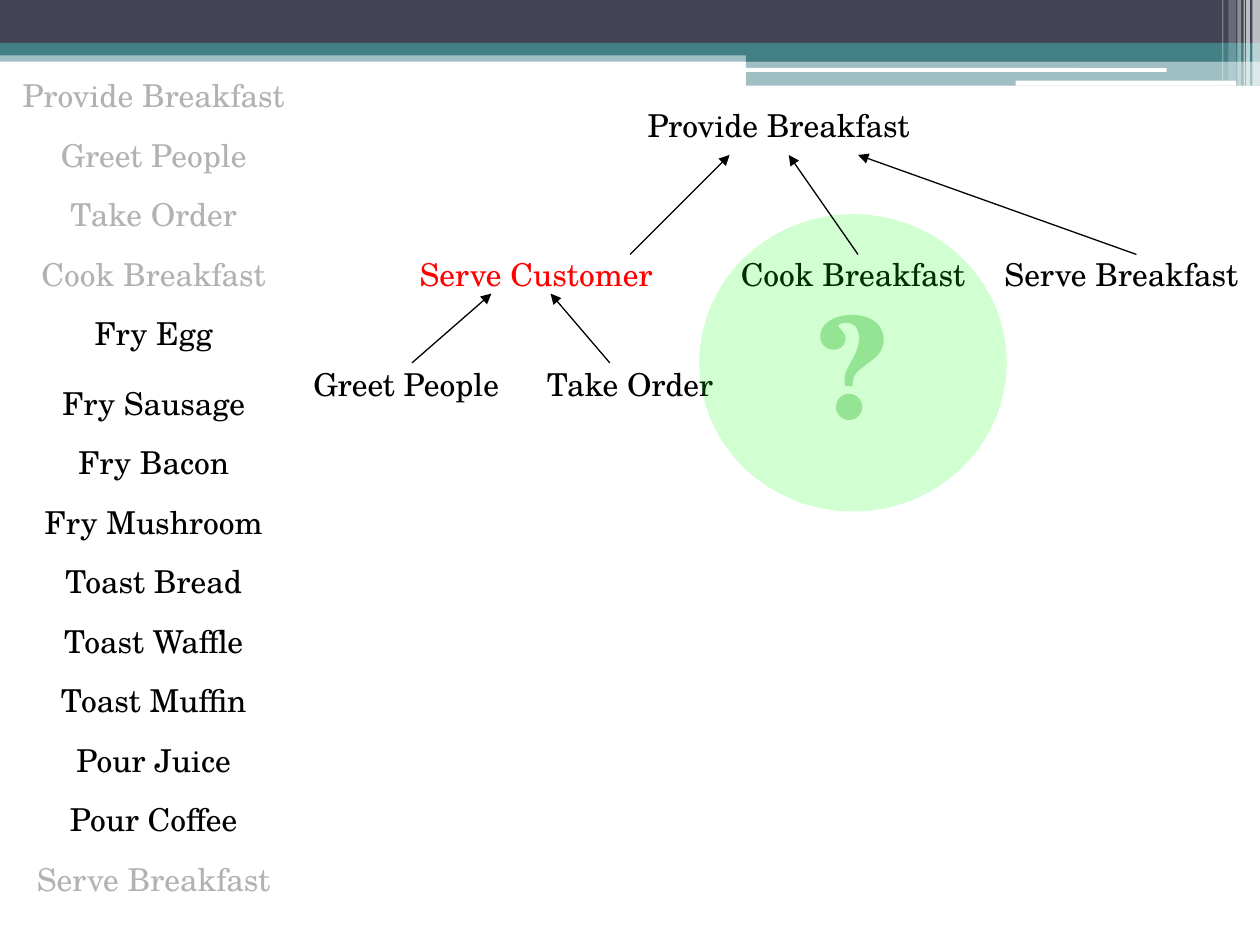
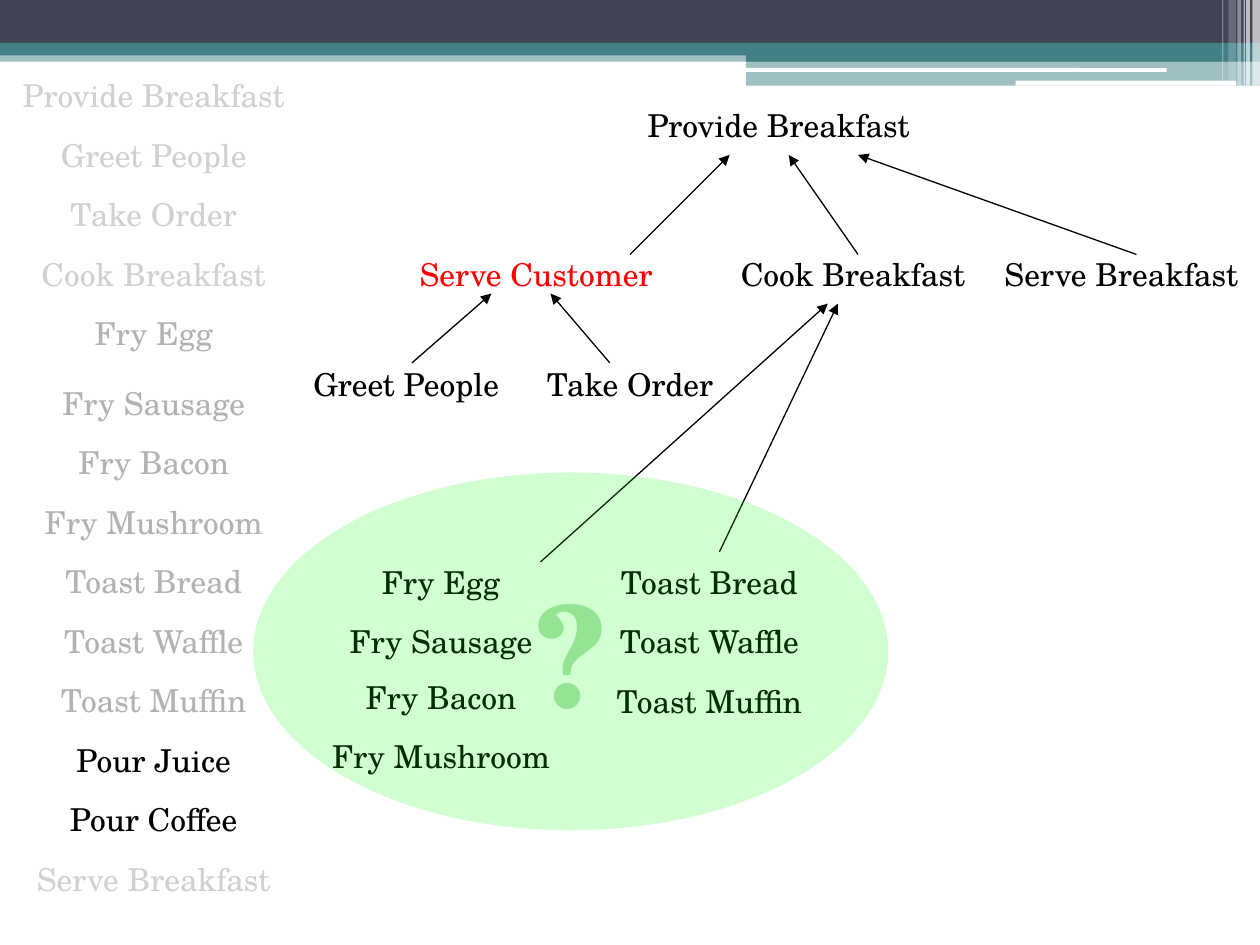
import dataclasses

import lxml.etree
import pptx
import pptx.dml.color
import pptx.enum.shapes
import pptx.enum.text
import pptx.oxml.ns
import pptx.util

RGBColor = pptx.dml.color.RGBColor
SHAPES = pptx.enum.shapes.MSO_SHAPE

BLACK = RGBColor(0x00, 0x00, 0x00)
WHITE = RGBColor(0xFF, 0xFF, 0xFF)
RED = RGBColor(0xFF, 0x00, 0x00)
GREY = RGBColor(0xB2, 0xB2, 0xB2)
PALE_GREY = RGBColor(0xD0, 0xD0, 0xD0)
NAVY = RGBColor(0x42, 0x44, 0x56)
TEAL = RGBColor(0x43, 0x80, 0x86)
GREEN = RGBColor(0x00, 0xFF, 0x00)
LEAF_GREEN = RGBColor(0x94, 0xE4, 0x94)

FONT = "TeX Gyre Schola"
SLIDE_WIDTH = pptx.util.Inches(10)
SLIDE_HEIGHT = pptx.util.Inches(7.5)
GRID = SLIDE_WIDTH / 10  # one grid cell; the slide is 10 columns by 7.5 rows

LABEL_WIDTH = 2.2
LABEL_HEIGHT = 0.47

TASKS = [
    "Provide Breakfast", "Greet People", "Take Order", "Cook Breakfast",
    "Fry Egg", "Fry Sausage", "Fry Bacon", "Fry Mushroom",
    "Toast Bread", "Toast Waffle", "Toast Muffin",
    "Pour Juice", "Pour Coffee", "Serve Breakfast",
]
FRYING = TASKS[4:8]
TOASTING = TASKS[8:11]
POURING = TASKS[11:13]
TASK_GAP = 0.08
ROW = (6.74 - 0.52 - TASK_GAP) / (len(TASKS) - 1)


@dataclasses.dataclass
class Box:
    left: float
    top: float
    width: float
    height: float

    def inner(self, left, top, width, height):
        """Return a box placed relative to this one's corner."""
        return Box(self.left + left, self.top + top, width, height)

    def emu(self):
        return [round(length * GRID) for length in
                (self.left, self.top, self.width, self.height)]


WHOLE_SLIDE = Box(0, 0, 10, 7.5)
TASK_LIST = Box(0.12, 0.52, LABEL_WIDTH, 6.69)
TREE = Box(2.4, 0.76, 7.6, 2.52)
LEAVES = Box(2.4, 4.38, 4.33, 1.86)


def add_filled(page, kind, box, colour, opacity=100):
    shape = page.shapes.add_shape(kind, *box.emu())
    shape.shadow.inherit = False
    shape.line.fill.background()
    shape.fill.solid()
    shape.fill.fore_color.rgb = colour
    if opacity < 100:
        tint = next(shape.element.iter(pptx.oxml.ns.qn("a:srgbClr")))
        lxml.etree.SubElement(tint, pptx.oxml.ns.qn("a:alpha"),
                              val=str(opacity * 1000))
    return shape


def write(shape, words, size, colour, bold=False):
    frame = shape.text_frame
    frame.text = words
    frame.word_wrap = False
    frame.margin_left = frame.margin_right = 0
    frame.vertical_anchor = pptx.enum.text.MSO_ANCHOR.MIDDLE
    para = frame.paragraphs[0]
    para.alignment = pptx.enum.text.PP_ALIGN.CENTER
    font = para.runs[0].font
    font.name = FONT
    font.size = pptx.util.Pt(size)
    font.bold = bold
    font.color.rgb = colour


def add_label(page, box, words, colour=BLACK):
    write(page.shapes.add_textbox(*box.emu()), words, 18, colour)


def add_arrow(page, box, start, end):
    """Draw an arrow between two points given relative to the box."""
    ends = [round(length * GRID) for x, y in (start, end)
            for length in (box.left + x, box.top + y)]
    arrow = page.shapes.add_connector(
        pptx.enum.shapes.MSO_CONNECTOR.STRAIGHT, *ends)
    arrow.line.color.rgb = BLACK
    arrow.line.width = pptx.util.Pt(0.75)
    outline = arrow.element.spPr.find(pptx.oxml.ns.qn("a:ln"))
    lxml.etree.SubElement(outline, pptx.oxml.ns.qn("a:tailEnd"),
                          type="triangle")
    lxml.etree.SubElement(arrow.element.spPr, pptx.oxml.ns.qn("a:effectLst"))


def add_column(page, box, names, colour_of, shift_from, shift):
    """Stack labels by row; those from index shift_from on move by shift."""
    for index, name in enumerate(names):
        top = index * ROW + (shift if index >= shift_from else 0)
        add_label(page, box.inner(0, top, box.width, LABEL_HEIGHT),
                  name, colour_of(name))


def add_header_band(page, box):
    """Draw the header and return its shapes."""
    bars = [
        (0, 0.4, 10, 0.09, TEAL, 50),
        (0, 0, 10, 0.34, NAVY, 100),
        (0, 0.34, 10, 0.1, TEAL, 100),
        (5.92, 0.39, 4.08, 0.1, TEAL, 100),
        (5.92, 0.48, 4.08, 0.2, TEAL, 50),
    ]
    rounded_bars = [(5.91, 0.54, 3.35, 0.03), (8.06, 0.64, 1.75, 0.04)]
    stripes = [
        (9.94, 0.06, 0.68, 65), (9.89, 0.03, 0.68, 65),
        (9.87, 0.01, 0.68, 60), (9.82, 0.03, 0.68, 40),
        (9.75, 0.06, 0.64, 20), (9.7, 0.01, 0.64, 30),
    ]
    band = [add_filled(page, SHAPES.RECTANGLE, box.inner(*place), colour, opacity)
            for *place, colour, opacity in bars]
    band += [add_filled(page, SHAPES.ROUNDED_RECTANGLE, box.inner(*place), WHITE)
             for place in rounded_bars]
    band += [add_filled(page, SHAPES.RECTANGLE,
                        box.inner(left, 0, width, height), WHITE, opacity)
             for left, width, height, opacity in stripes]
    return band


def share_header_band(page):
    """Put the header on the layout, so that every slide shows it."""
    for shape in add_header_band(page, WHOLE_SLIDE):
        page.slide_layout.shapes.element.append(shape.element)


def add_branches(page, box):
    for name, left, top, width, colour in [
        ("Cook Breakfast", 3.27, 1.18, LABEL_WIDTH, BLACK),
        ("Take Order", 1.85, 2.05, 1.5, BLACK),
        ("Greet People", 0, 2.05, 1.65, BLACK),
        ("Serve Breakfast", 5.4, 1.18, LABEL_WIDTH, BLACK),
        ("Serve Customer", 0.87, 1.18, 1.97, RED),
    ]:
        add_label(page, box.inner(left, top, width, LABEL_HEIGHT), name, colour)
    for start_x, end_x in [(0.87, 1.5), (2.44, 1.97)]:
        add_arrow(page, box, (start_x, 2.12), (end_x, 1.57))


def add_root(page, box):
    add_label(page, box.inner(2.68, 0, LABEL_WIDTH, LABEL_HEIGHT),
              "Provide Breakfast")
    for start_x, end_x in [(2.6, 3.39), (4.41, 3.86), (6.62, 4.41)]:
        add_arrow(page, box, (start_x, 1.26), (end_x, 0.47))


def add_leaves(page, box):
    """Add the frying and toasting tasks with arrows up to their parent."""
    for names, left, shift in [(FRYING, 0, -0.03), (TOASTING, 2.13, 0)]:
        add_column(page, box.inner(left, 0, LABEL_WIDTH, box.height), names,
                   lambda name: BLACK, 2, shift)
    add_arrow(page, box, (1.89, 0.08), (4.17, -1.97))
    add_arrow(page, box, (3.31, 0), (4.25, -1.97))


def add_question(page, box):
    ellipse = add_filled(page, SHAPES.OVAL, box, GREEN, 18)
    write(ellipse, "?", 80, LEAF_GREEN, bold=True)


def build_page(page, question, pending, placed_now=(), show_leaves=False):
    """Add task list, tree and question; pending tasks are still black."""
    def task_colour(name):
        if name in pending:
            return BLACK
        return GREY if not placed_now or name in placed_now else PALE_GREY

    add_column(page, TASK_LIST, TASKS, task_colour, 5, TASK_GAP)
    add_branches(page, TREE)
    if show_leaves:
        add_leaves(page, LEAVES)
    add_question(page, question)
    add_root(page, TREE)


def main():
    deck = pptx.Presentation()
    deck.slide_width = SLIDE_WIDTH
    deck.slide_height = SLIDE_HEIGHT
    blank = deck.slide_layouts[6]

    cook_page = deck.slides.add_slide(blank)
    share_header_band(cook_page)
    build_page(cook_page, Box(5.55, 1.7, 2.44, 2.36),
               FRYING + TOASTING + POURING)

    leaves_page = deck.slides.add_slide(blank)
    build_page(leaves_page, Box(2.01, 3.75, 5.04, 2.84), POURING,
               placed_now=FRYING + TOASTING, show_leaves=True)

    deck.save("out.pptx")


if __name__ == "__main__":
    main()
